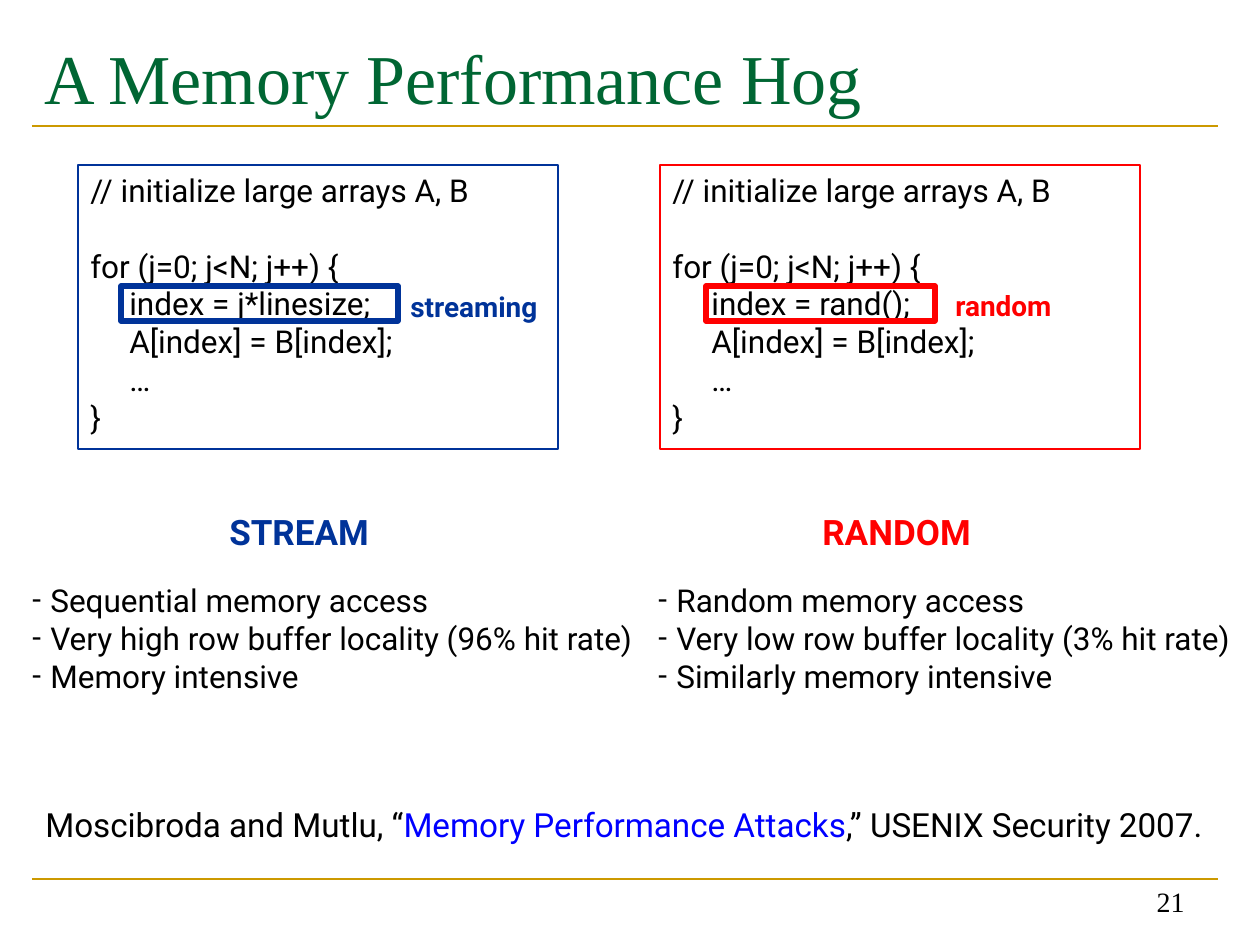
from lxml import etree
from pptx import Presentation
from pptx.dml.color import RGBColor
from pptx.enum.shapes import MSO_CONNECTOR as CONN, MSO_SHAPE as SHAPE
from pptx.enum.text import MSO_ANCHOR as ANCHOR, PP_ALIGN as ALIGN
from pptx.oxml.ns import qn
from pptx.util import Emu, Pt

BLACK, GREEN, GOLD = "000000", "006633", "CC9900"
BLUE, RED, LINK = "003399", "FF0000", "0000FF"
SANS, SERIF = "Roboto", "Times New Roman"


def px(n):
    return Emu(round(n * 914400 / 126))


def rgb(c):
    return RGBColor.from_string(c)


class Deck:
    """Style and current slide."""

    def __init__(self, prs):
        self.s = prs.slides.add_slide(prs.slide_layouts[6])

    def run(self, p, text, size, color=BLACK, font=SANS, bold=False):
        r = p.add_run()
        r.text = text
        r.font.size, r.font.name, r.font.bold = Pt(size), font, bold
        r.font.color.rgb = rgb(color)

    def frame(self, sp, anchor=ANCHOR.TOP):
        tf = sp.text_frame
        tf.word_wrap, tf.vertical_anchor = True, anchor
        return tf

    def paragraphs(self, tf, lines):
        for i, line in enumerate(lines):
            p = tf.add_paragraph() if i else tf.paragraphs[0]
            p.alignment = ALIGN.LEFT
            yield p, line

    def text(self, box, runs, size, font=SANS, bold=False,
             align=ALIGN.LEFT, anchor=ANCHOR.TOP):
        tf = self.frame(self.s.shapes.add_textbox(*map(px, box)), anchor)
        p = tf.paragraphs[0]
        p.alignment = align
        for text, color in runs:
            self.run(p, text, size, color, font, bold)
        return tf

    def rect(self, box, color, width):
        sp = self.s.shapes.add_shape(SHAPE.RECTANGLE, *map(px, box))
        sp.shadow.inherit = False
        sp.fill.background()
        sp.line.color.rgb, sp.line.width = rgb(color), Pt(width)
        return sp

    def rule(self, y):
        c = self.s.shapes.add_connector(CONN.STRAIGHT, px(32), px(y), px(1218), px(y))
        c.line.color.rgb, c.line.width = rgb(GOLD), Pt(1.5)
        etree.SubElement(c._element.spPr, qn("a:effectLst"))

    def code(self, box, color, index):
        tf = self.frame(self.rect(box, color, 1.5))
        lines = [("// initialize large arrays A, B", 0), ("for (j=0; j<N; j++) {", 0),
                 (f"index = {index};", 1), ("A[index] = B[index];", 1), ("…", 1), ("}", 0)]
        for p, (text, level) in self.paragraphs(tf, lines):
            if text.startswith("for"):
                p.space_before = Pt(21.5)
            p._p.get_or_add_pPr().set("marL", str(px(39 * level)))
            self.run(p, text, 18)

    def bullets(self, box, lines):
        tf = self.frame(self.s.shapes.add_textbox(*map(px, box)))
        for p, text in self.paragraphs(tf, lines):
            pPr = p._p.get_or_add_pPr()
            pPr.set("marL", str(px(18)))
            pPr.set("indent", str(-px(18)))
            etree.SubElement(pPr, qn("a:buFont"), typeface=SANS)
            etree.SubElement(pPr, qn("a:buChar"), char="-")
            self.run(p, text, 18)


def main():
    prs = Presentation()
    prs.slide_width, prs.slide_height = px(1260), px(945)
    d = Deck(prs)

    # Title, rules and page number
    for y in (126, 879):
        d.rule(y)
    title = d.text((32, 21, 1187, 147), [("A Memory Performance Hog", GREEN)], 40, SERIF)
    title.margin_top = px(14)
    d.text((903, 861, 294, 63), [("21", BLACK)], 16, SERIF,
           align=ALIGN.RIGHT, anchor=ANCHOR.BOTTOM)

    # One column per access pattern: code, marked line, heading, properties
    columns = [
        (BLUE, 78, "j*linesize", (121, 286, 277, 35),
         "streaming", (398, 283, 170, 47), "STREAM", (217, 504, 174, 54),
         (20, 575, 660, 129),
         ["Sequential memory access", "Very high row buffer locality (96% hit rate)",
          "Memory intensive"]),
        (RED, 660, "rand()", (706, 286, 229, 35),
         "random", (943, 282, 136, 47), "RANDOM", (810, 504, 188, 55),
         (646, 575, 630, 129),
         ["Random memory access", "Very low row buffer locality (3% hit rate)",
          "Similarly memory intensive"]),
    ]
    for color, x, index, mark, tag, tag_box, head, head_box, list_box, facts in columns:
        d.code((x, 165, 480, 284), color, index)
        d.rect(mark, color, 3)
        d.text(tag_box, [(tag, color)], 16, bold=True)
        d.text(head_box, [(head, color)], 20, bold=True)
        d.bullets(list_box, facts)

    # Citation
    d.text((33, 798, 1197, 91), [("Moscibroda and Mutlu, “", BLACK),
                                 ("Memory Performance Attacks", LINK),
                                 (",” USENIX Security 2007.", BLACK)], 19)

    prs.save("out.pptx")


if __name__ == "__main__":
    main()
